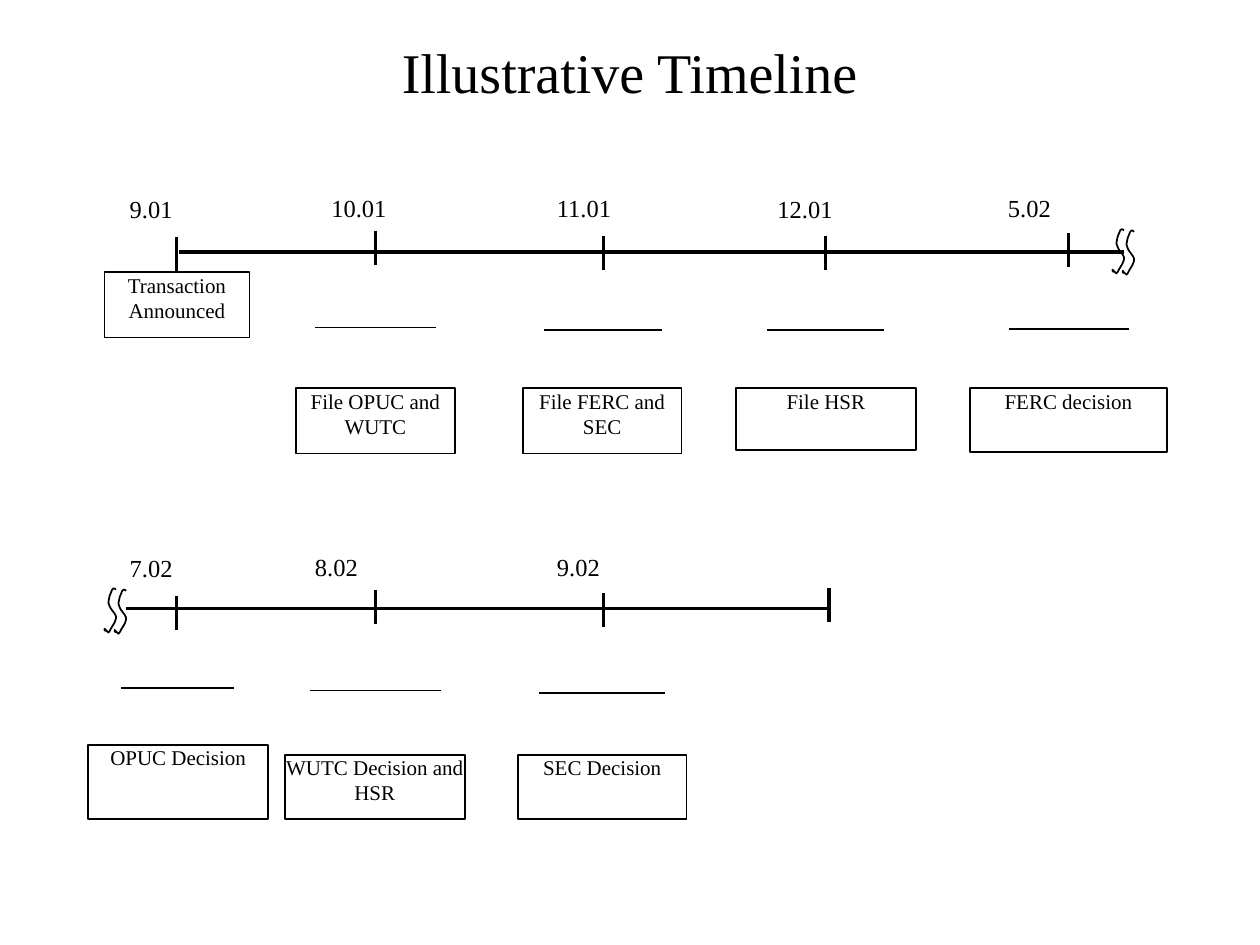
from pptx import Presentation
from pptx.dml.color import RGBColor
from pptx.enum.shapes import MSO_CONNECTOR as LINK, MSO_SHAPE as SHAPE
from pptx.enum.text import MSO_ANCHOR as ANCHOR, PP_ALIGN as ALIGN
from pptx.oxml.ns import qn
from pptx.util import Inches, Pt
from lxml import etree

COLORS = {"ink": "000000"}
FONT = "Times New Roman"
TICK = 0.27
WAVE = [(0.09, 0.01), (0.08, 0), (0.07, 0), (0.06, 0.01), (0.04, 0.06),
        (0.03, 0.11), (0.04, 0.14), (0.05, 0.16), (0.08, 0.2), (0.09, 0.22),
        (0.09, 0.24), (0.08, 0.27), (0.05, 0.32), (0.04, 0.34), (0.03, 0.35),
        (0.02, 0.34), (0.01, 0.33), (0, 0.32), (0, 0.33), (0.01, 0.34)]

# Offsets from the row's corner: date, its place, tick top,
# rule (left, top, width), event, box (left, top, width, height)
FIRST = [
    ("9.01", (0.33, 0.01), (0.7, 0.35), None,
     "Transaction Announced", (0.13, 0.63, 1.15, 0.52)),
    ("10.01", (1.93, 0), (2.28, 0.3), (1.8, 1.07, 0.96),
     "File OPUC and WUTC", (1.65, 1.55, 1.26, 0.52)),
    ("11.01", (3.72, 0), (4.09, 0.34), (3.62, 1.09, 0.93),
     "File FERC and SEC", (3.45, 1.55, 1.26, 0.52)),
    ("12.01", (5.47, 0.01), (5.85, 0.34), (5.39, 1.09, 0.93),
     "File HSR", (5.14, 1.55, 1.43, 0.49)),
    ("5.02", (7.3, 0), (7.78, 0.32), (7.31, 1.08, 0.95),
     "FERC decision", (7, 1.55, 1.56, 0.51)),
]
SECOND = [
    ("7.02", (0.33, 0.01), (0.7, 0.35), (0.26, 1.08, 0.9),
     "OPUC Decision", (0, 1.53, 1.43, 0.59)),
    ("8.02", (1.8, 0), (2.28, 0.3), (1.76, 1.1, 1.04),
     "WUTC Decision and HSR", (1.56, 1.61, 1.43, 0.51)),
    ("9.02", (3.72, 0), (4.09, 0.33), (3.58, 1.12, 1),
     "SEC Decision", (3.41, 1.61, 1.34, 0.51)),
]


def ink(line, width):
    line.color.rgb = RGBColor.from_string(COLORS["ink"])
    line.width = Pt(width)


def write(shape, text, size=12, align=ALIGN.CENTER, top=0):
    frame = shape.text_frame
    frame.word_wrap = True
    frame.vertical_anchor = ANCHOR.TOP
    frame.margin_left = frame.margin_right = frame.margin_bottom = 0
    frame.margin_top = Inches(top)
    para = frame.paragraphs[0]
    para.alignment = align
    run = para.add_run()
    run.text = text
    run.font.size, run.font.name = Pt(size), FONT
    run.font.color.rgb = RGBColor.from_string(COLORS["ink"])


def label(slide, box, text, **style):
    write(slide.shapes.add_textbox(*map(Inches, box)), text, **style)


def stroke(slide, *ends, width=2):
    line = slide.shapes.add_connector(LINK.STRAIGHT, *map(Inches, ends))
    ink(line.line, width)
    etree.SubElement(line._element.spPr, qn("a:effectLst"))


def gap(slide, x, y):
    """Draw the two wavy strands that mark a break in the axis."""
    for dx, dy in ((0, 0), (0.08, 0.01)):
        first, *rest = [(Inches(x + dx + px), Inches(y + dy + py))
                        for px, py in WAVE]
        pen = slide.shapes.build_freeform(*first)
        pen.add_line_segments(rest, close=False)
        wave = pen.convert_to_shape()
        wave.shadow.inherit = False
        wave.fill.background()
        ink(wave.line, 1)


def event(slide, x, y, date, spot, tick, rule, text, box):
    label(slide, (x + spot[0], y + spot[1], 0.8, 0.33), date,
          size=14, align=ALIGN.LEFT)
    mark(slide, x, y, tick)
    if rule:
        left, top, width = rule
        stroke(slide, x + left, y + top, x + left + width, y + top, width=1)
    left, top, width, height = box
    card = slide.shapes.add_shape(
        SHAPE.RECTANGLE, *map(Inches, (x + left, y + top, width, height)))
    card.shadow.inherit = False
    card.fill.background()
    ink(card.line, 1)
    write(card, text)


def mark(slide, x, y, tick):
    left, top = x + tick[0], y + tick[1]
    stroke(slide, left, top, left, top + TICK)


def row(slide, x, y, events, axis, wave, end=None):
    start, stop, level = axis
    stroke(slide, x + start, y + level, x + stop, y + level)
    gap(slide, x + wave[0], y + wave[1])
    for item in events:
        event(slide, x, y, *item)
    if end:
        mark(slide, x, y, end)


def main():
    deck = Presentation()
    deck.slide_width, deck.slide_height = Inches(10), Inches(7.5)
    slide = deck.slides.add_slide(deck.slide_layouts[6])
    label(slide, (0.75, 0.25, 8.5, 1.17), "Illustrative Timeline",
          size=32, top=0.05)
    row(slide, 0.7, 1.53, FIRST, axis=(0.72, 8.22, 0.47), wave=(8.13, 0.29))
    row(slide, 0.7, 4.38, SECOND, axis=(0.3, 5.88, 0.45), wave=(0.13, 0.29),
        end=(5.88, 0.29))
    deck.save("out.pptx")


if __name__ == "__main__":
    main()
